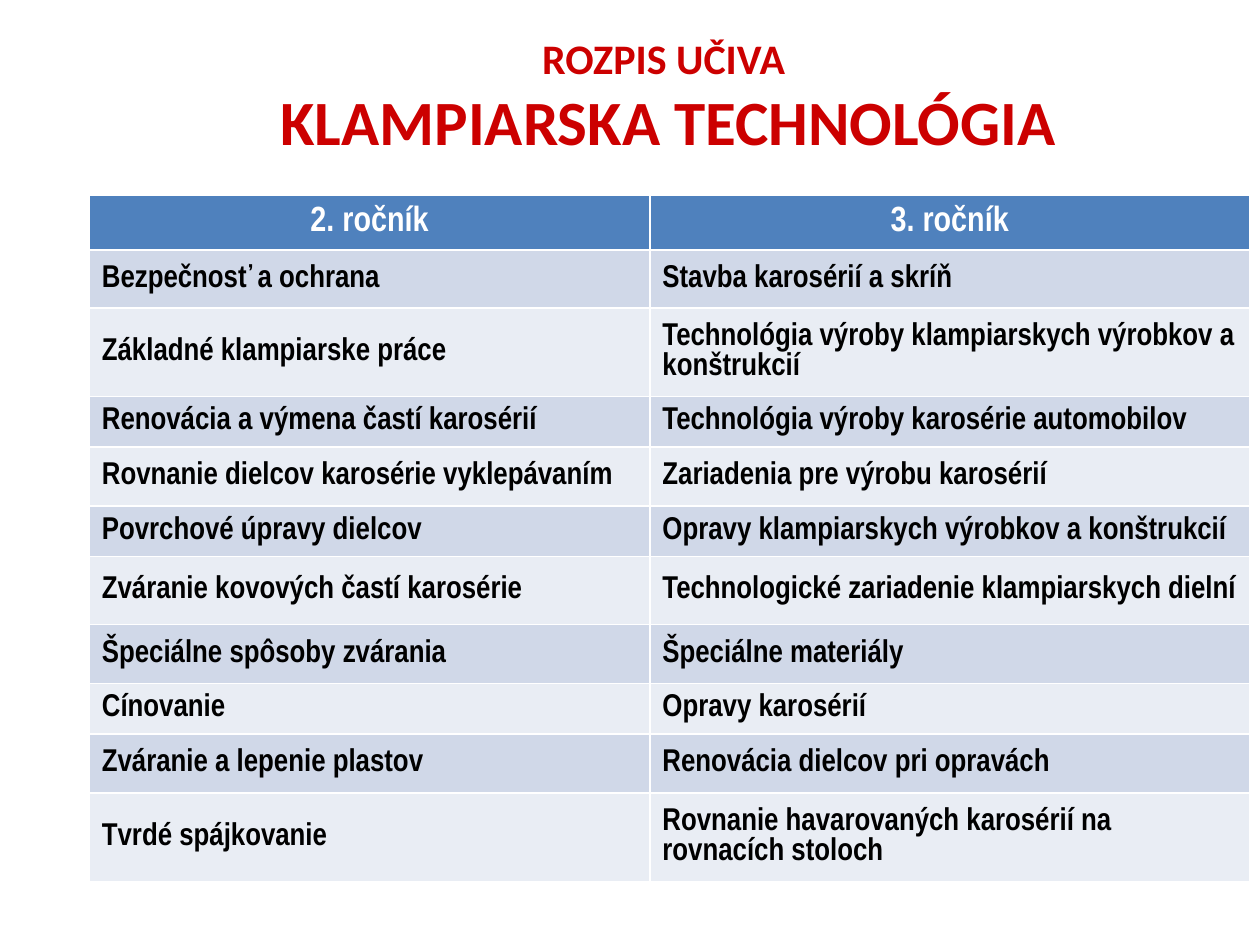
from pptx import Presentation
from pptx.dml.color import RGBColor as Rgb
from pptx.enum.text import MSO_ANCHOR as Anchor, MSO_AUTO_SIZE as AutoSize, PP_ALIGN as Align
from pptx.util import Cm, Pt

COLOURS = {"title": "CC0000", "header": "4F81BD", "header_text": "FFFFFF",
           "text": "000000", "odd": "D0D8E8", "even": "E9EDF4"}

TITLE = [("ROZPIS UČIVA ", 24), ("KLAMPIARSKA TECHNOLÓGIA", 36)]

# Row height in cm, second year, third year
TOPICS = [
    (1.1, "2. ročník", "3. ročník"),
    (1.17, "Bezpečnosť a ochrana", "Stavba karosérií a skríň"),
    (1.78, "Základné klampiarske práce",
     "Technológia výroby klampiarskych výrobkov a konštrukcií"),
    (1.02, "Renovácia a výmena častí karosérií",
     "Technológia výroby karosérie automobilov"),
    (1.19, "Rovnanie dielcov karosérie vyklepávaním", "Zariadenia pre výrobu karosérií"),
    (1.02, "Povrchové úpravy dielcov", "Opravy klampiarskych výrobkov a konštrukcií"),
    (1.37, "Zváranie kovových častí karosérie",
     "Technologické zariadenie klampiarskych dielní"),
    (1.19, "Špeciálne spôsoby zvárania", "Špeciálne materiály"),
    (1.0, "Cínovanie", "Opravy karosérií"),
    (1.19, "Zváranie a lepenie plastov", "Renovácia dielcov pri opravách"),
    (1.75, "Tvrdé spájkovanie", "Rovnanie havarovaných karosérií na rovnacích stoloch"),
]


class SlideBuilder:
    def __init__(self, slide, title_font, table_font):
        self.slide = slide
        self.title_font = title_font
        self.table_font = table_font

    def add_text(self, para, text, font, size, colour, align):
        para.alignment = align
        span = para.add_run()
        span.text = text
        for name, value in {"name": font, "size": Pt(size), "bold": True}.items():
            setattr(span.font, name, value)
        span.font.color.rgb = Rgb.from_string(COLOURS[colour])

    def title(self, lines, left, top, width, height):
        box = self.slide.shapes.add_textbox(Cm(left), Cm(top), Cm(width), Cm(height))
        frame = box.text_frame
        frame.word_wrap = True
        frame.auto_size = AutoSize.SHAPE_TO_FIT_TEXT
        for index, (text, size) in enumerate(lines):
            para = frame.add_paragraph() if index else frame.paragraphs[0]
            self.add_text(para, text, self.title_font, size, "title", Align.CENTER)

    def table(self, rows, left, top, widths):
        height = sum(row[0] for row in rows)
        table = self.slide.shapes.add_table(
            len(rows), len(widths), Cm(left), Cm(top), Cm(sum(widths)), Cm(height)).table
        for column, width in zip(table.columns, widths):
            column.width = Cm(width)
        for index, (row_height, *texts) in enumerate(rows):
            table.rows[index].height = Cm(row_height)
            if index == 0:
                fill, style = "header", (20, "header_text", Align.CENTER)
            else:
                fill, style = "odd" if index % 2 else "even", (18, "text", Align.LEFT)
            for cell, text in zip(table.rows[index].cells, texts):
                cell.vertical_anchor = Anchor.MIDDLE
                cell.fill.solid()
                cell.fill.fore_color.rgb = Rgb.from_string(COLOURS[fill])
                self.add_text(cell.text_frame.paragraphs[0], text, self.table_font, *style)


def main():
    deck = Presentation()
    deck.slide_width, deck.slide_height = Cm(25.4), Cm(19.05)
    slide = deck.slides.add_slide(deck.slide_layouts[6])
    builder = SlideBuilder(slide, "Calibri", "Arial Narrow")

    # Heading
    builder.title(TITLE, 1.88, 0.53, 23.19, 2.82)
    # Topics by year
    builder.table(TOPICS, 1.8, 3.94, (11.3, 12.09))

    deck.save("out.pptx")


if __name__ == "__main__":
    main()
